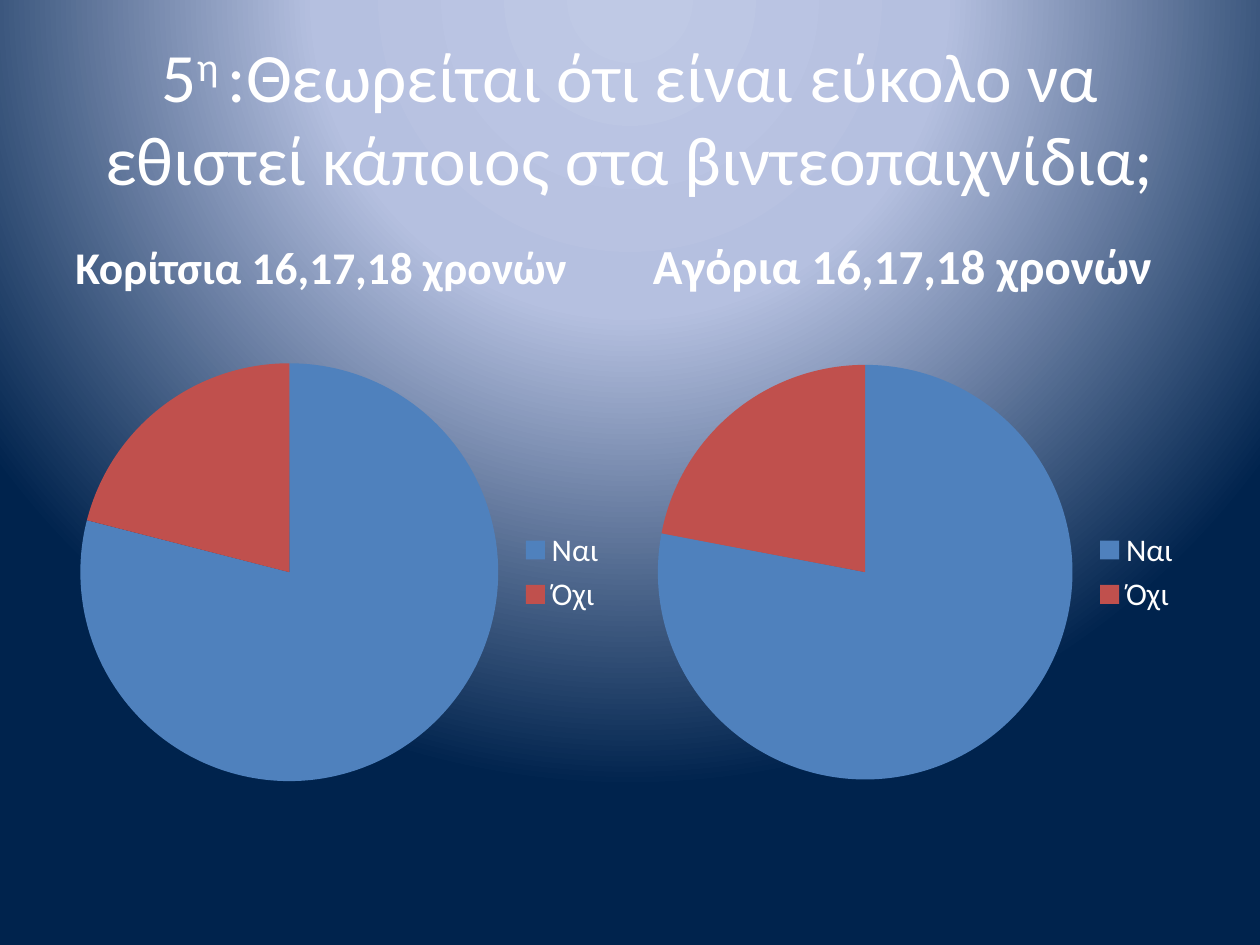
import pptx
import pptx.chart.data
import pptx.dml.color
import pptx.enum.chart
import pptx.enum.text
import pptx.oxml
import pptx.oxml.ns
import pptx.util

Pt = pptx.util.Pt
WHITE = pptx.dml.color.RGBColor(0xFF, 0xFF, 0xFF)
BLUE = pptx.dml.color.RGBColor(0x4F, 0x81, 0xBD)
RED = pptx.dml.color.RGBColor(0xC0, 0x50, 0x4D)
BACKGROUND_STOPS = (
    (0, pptx.dml.color.RGBColor(0xBF, 0xC9, 0xE5)),
    (40, pptx.dml.color.RGBColor(0xB5, 0xC0, 0xE0)),
    (100, pptx.dml.color.RGBColor(0x00, 0x23, 0x4D)),
)
FONT_NAME = "Calibri"
MARGIN = 36
COLUMN_WIDTH = 318
HEADING_TOP, HEADING_HEIGHT = 121, 50.5
CHART_HEIGHT = 311
SLIDE_WIDTH, SLIDE_HEIGHT = 720, 540


def format_font(font, **values):
    font.color.rgb = WHITE
    for name, value in {"name": FONT_NAME, **values}.items():
        setattr(font, name, value)


def set_background(slide):
    slide.background.fill.solid()
    properties = slide.background._cSld.bg.bgPr
    stops = "".join(
        f'<a:gs pos="{position * 1000}"><a:srgbClr val="{color}"/></a:gs>'
        for position, color in BACKGROUND_STOPS
    )
    gradient = pptx.oxml.parse_xml(
        f'<a:gradFill {pptx.oxml.ns.nsdecls("a")} rotWithShape="1">'
        f"<a:gsLst>{stops}</a:gsLst>"
        '<a:path path="circle"><a:fillToRect l="50000" t="-80000" '
        'r="50000" b="180000"/></a:path></a:gradFill>'
    )
    properties.replace(properties[0], gradient)


def add_text(slide, box, runs, anchor, alignment, **font_values):
    shape = slide.shapes.add_textbox(*map(Pt, box))
    frame = shape.text_frame
    frame.word_wrap = True
    frame.vertical_anchor = anchor
    paragraph = frame.paragraphs[0]
    paragraph.alignment = alignment
    for text, baseline in runs:
        run = paragraph.add_run()
        run.text = text
        format_font(run.font, **font_values)
        if baseline:
            run._r.get_or_add_rPr().set("baseline", str(baseline * 1000))


def add_pie(slide, left, categories, values):
    data = pptx.chart.data.CategoryChartData()
    data.categories = categories
    data.add_series("Series 1", values)
    box = (left, HEADING_TOP + HEADING_HEIGHT, COLUMN_WIDTH, CHART_HEIGHT)
    chart = slide.shapes.add_chart(
        pptx.enum.chart.XL_CHART_TYPE.PIE, *map(Pt, box), data
    ).chart
    format_font(chart.font, size=Pt(18))
    chart.has_title = False
    chart.has_legend = True
    chart.legend.position = pptx.enum.chart.XL_LEGEND_POSITION.RIGHT
    chart.legend.include_in_layout = False
    plot = chart.plots[0]
    plot.vary_by_categories = True
    for index, color in enumerate((BLUE, RED)):
        fill = plot.series[0].points[index].format.fill
        fill.solid()
        fill.fore_color.rgb = color


def main():
    presentation = pptx.Presentation()
    presentation.slide_width = Pt(SLIDE_WIDTH)
    presentation.slide_height = Pt(SLIDE_HEIGHT)
    slide = presentation.slides.add_slide(presentation.slide_layouts[6])
    set_background(slide)

    anchors = pptx.enum.text.MSO_ANCHOR
    alignments = pptx.enum.text.PP_ALIGN
    question = (
        ("5", 0),
        ("η ", 30),
        (":Θεωρείται ότι είναι εύκολο να εθιστεί κάποιος στα βιντεοπαιχνίδια;", 0),
    )
    title_box = (MARGIN, 21.6, SLIDE_WIDTH - 2 * MARGIN, 90)
    add_text(slide, title_box, question, anchors.MIDDLE, alignments.CENTER, size=Pt(39.6))

    groups = (
        (MARGIN, "Κορίτσια 16,17,18 χρονών", 25.9, ("Ναι", "Όχι"), (79, 21)),
        (SLIDE_WIDTH - MARGIN - COLUMN_WIDTH, "Αγόρια 16,17,18 χρονών", 28,
         ("Ναι", "Όχι "), (78, 22)),
    )
    for left, heading, size, categories, values in groups:
        heading_box = (left, HEADING_TOP, COLUMN_WIDTH, HEADING_HEIGHT)
        add_text(slide, heading_box, ((heading, 0),), anchors.BOTTOM,
                 alignments.LEFT, size=Pt(size), bold=True)
        add_pie(slide, left, categories, values)

    presentation.save("out.pptx")


if __name__ == "__main__":
    main()
